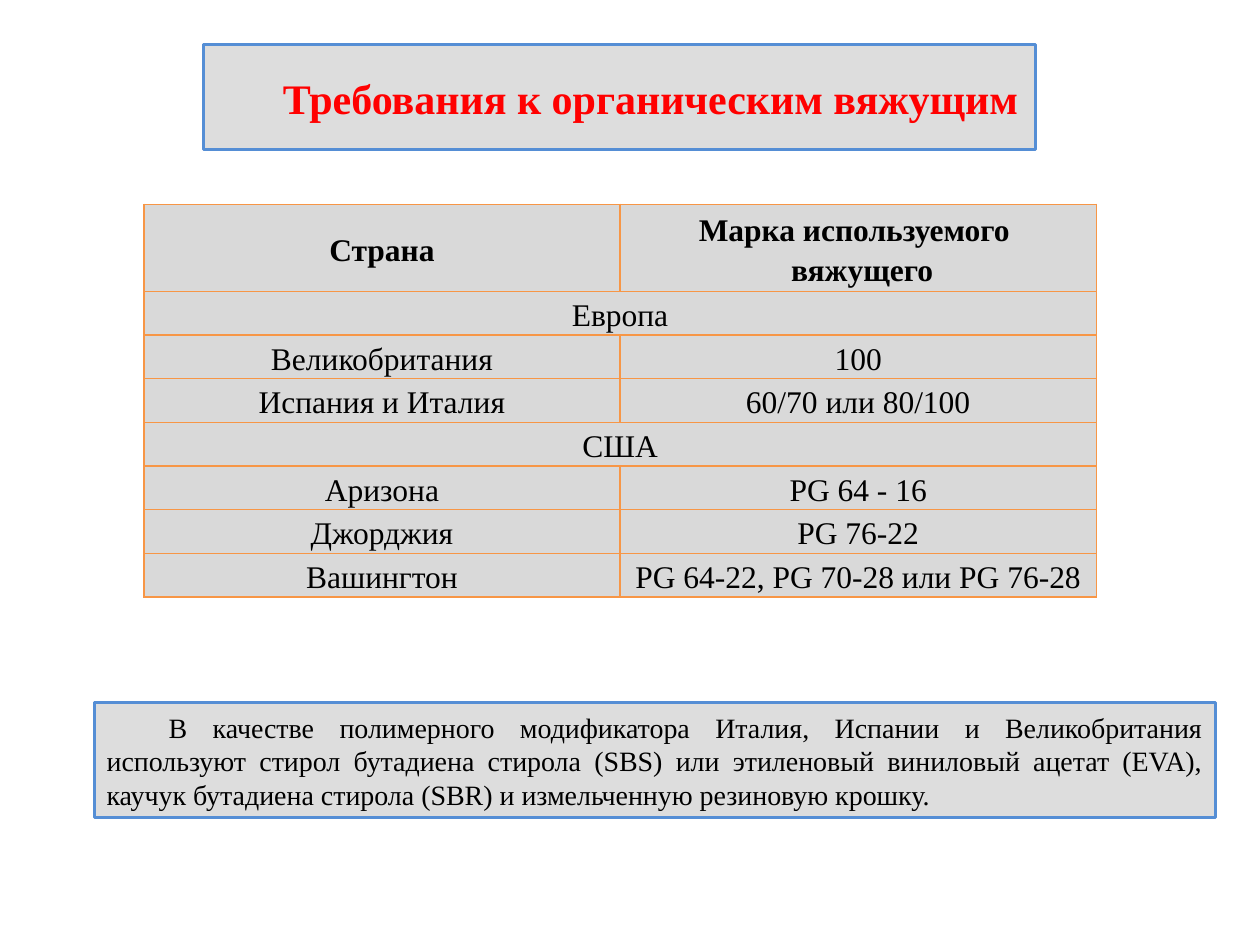
from dataclasses import dataclass

from lxml.etree import SubElement
from pptx import Presentation
from pptx.dml.color import RGBColor
from pptx.enum.shapes import MSO_SHAPE
from pptx.enum.text import MSO_ANCHOR, MSO_AUTO_SIZE, PP_ALIGN
from pptx.oxml.ns import qn
from pptx.util import Cm, Pt

HUES = {"fill": "D9D9D9", "frame": "558ED5", "grid": "F79646",
        "title": "FF0000", "text": "000000"}
FACE = "Times New Roman"


@dataclass
class Panel:
    left: float
    top: float
    width: float
    height: float
    text: str
    align: PP_ALIGN
    hue: str
    font: dict


@dataclass
class Row:
    cells: tuple
    height: float = 0.88
    bold: bool = False


TITLE = Panel(4.1, 1.33, 16.78, 1.27, "Требования к органическим вяжущим",
              PP_ALIGN.CENTER, "title",
              {"name": FACE, "size": Pt(24), "bold": True})
NOTE = Panel(1.9, 14.17, 22.6, 2.32,
             "В качестве полимерного модификатора Италия, Испании и "
             "Великобритания используют стирол бутадиена стирола (SBS) или "
             "этиленовый виниловый ацетат (EVA), каучук бутадиена стирола "
             "(SBR) и измельченную резиновую крошку.",
             PP_ALIGN.JUSTIFY, "text",
             {"name": FACE, "size": Pt(16), "bold": False})

# A row with one cell spans the whole table
ROWS = [
    Row(("Страна", "Марка используемого \n вяжущего"), 1.75, True),
    Row(("Европа",)),
    Row(("Великобритания", "100")),
    Row(("Испания и Италия", "60/70 или 80/100")),
    Row(("США",)),
    Row(("Аризона", "PG 64 - 16")),
    Row(("Джорджия", "PG 76-22")),
    Row(("Вашингтон", "PG 64-22, PG 70-28 или PG 76-28")),
]


def tint(name: str) -> RGBColor:
    return RGBColor.from_string(HUES[name])


def assign(item, values: dict) -> None:
    for key, value in values.items():
        setattr(item, key, value)


def style(para, font: dict, hue: str) -> None:
    for run in para.runs:
        assign(run.font, font)
        run.font.color.rgb = tint(hue)


def draw_panel(shape, panel: Panel) -> None:
    assign(shape, {key: Cm(getattr(panel, key))
                   for key in ("left", "top", "width", "height")})
    # Translucent fill and frame
    shape.fill.solid()
    shape.fill.fore_color.rgb = tint("fill")
    color = shape._element.spPr.find(".//" + qn("a:srgbClr"))
    SubElement(color, qn("a:alpha"), val="87000")
    shape.line.color.rgb = tint("frame")
    shape.line.width = Pt(1.75)
    # Text with a first-line indent
    frame = shape.text_frame
    frame.text = panel.text
    assign(frame, {"word_wrap": True, "vertical_anchor": MSO_ANCHOR.MIDDLE,
                   "auto_size": MSO_AUTO_SIZE.SHAPE_TO_FIT_TEXT})
    para = frame.paragraphs[0]
    para.alignment = panel.align
    assign(para, {"space_before": Pt(0)})
    props = para._p.get_or_add_pPr()
    props.set("marL", "0")
    props.set("indent", str(Cm(1.25)))
    style(para, panel.font, panel.hue)


def draw_cell(cell, text: str, bold: bool) -> None:
    assign(cell, {"text": text, "vertical_anchor": MSO_ANCHOR.MIDDLE,
                  "margin_left": Cm(0.18), "margin_right": Cm(0.18),
                  "margin_top": 0, "margin_bottom": 0})
    for para in cell.text_frame.paragraphs:
        assign(para, {"alignment": PP_ALIGN.CENTER, "line_spacing": 1.15})
        style(para, {"name": FACE, "size": Pt(18), "bold": bold}, "text")
    # Borders come before the fill
    props = cell._tc.get_or_add_tcPr()
    for side in ("lnL", "lnR", "lnT", "lnB"):
        line = SubElement(props, qn("a:" + side), w=str(Pt(1)))
        solid = SubElement(line, qn("a:solidFill"))
        SubElement(solid, qn("a:srgbClr"), val=HUES["grid"])
    cell.fill.solid()
    cell.fill.fore_color.rgb = tint("fill")


def draw_table(slide, rows: list[Row]) -> None:
    total = Cm(sum(row.height for row in rows))
    table = slide.shapes.add_table(len(rows), 2, Cm(2.9), Cm(4.12),
                                   Cm(19.2), total).table
    assign(table, {"first_row": False, "horz_banding": False})
    for at, row in enumerate(rows):
        table.rows[at].height = Cm(row.height)
        if len(row.cells) == 1:
            table.cell(at, 0).merge(table.cell(at, 1))
        for col in range(2):
            text = row.cells[col] if col < len(row.cells) else ""
            draw_cell(table.cell(at, col), text, row.bold)


def main() -> None:
    deck = Presentation()
    assign(deck, {"slide_width": Cm(25.4), "slide_height": Cm(19.05)})
    slide = deck.slides.add_slide(deck.slide_layouts[5])

    # Title, table and note
    draw_panel(slide.shapes.title, TITLE)
    draw_table(slide, ROWS)
    note = slide.shapes.add_shape(MSO_SHAPE.RECTANGLE, 0, 0, Cm(1), Cm(1))
    note.shadow.inherit = False
    draw_panel(note, NOTE)
    deck.save("out.pptx")


if __name__ == "__main__":
    main()
